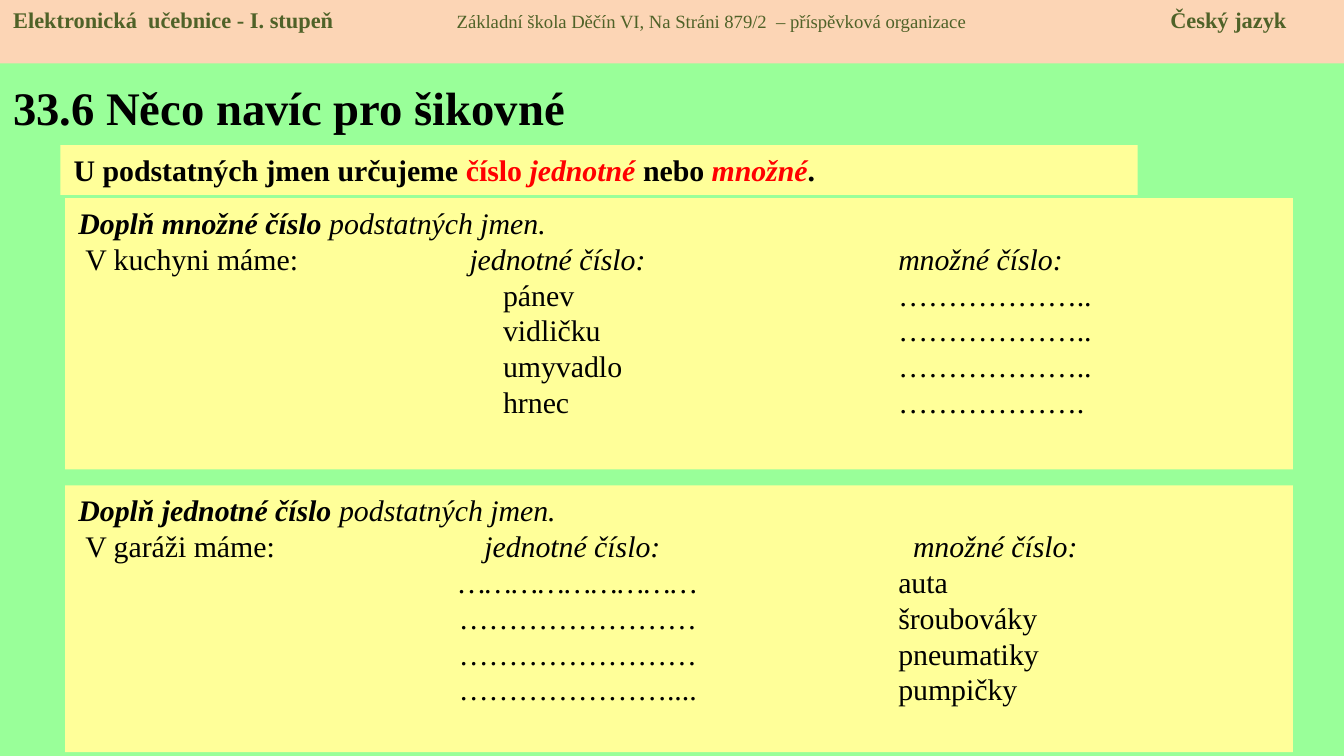
from lxml.etree import SubElement
from pptx import Presentation
from pptx.dml.color import RGBColor
from pptx.enum.shapes import MSO_SHAPE
from pptx.enum.text import MSO_ANCHOR, PP_ALIGN
from pptx.oxml.ns import qn
from pptx.util import Inches, Pt

WIDE = Inches(10)
HIGH = WIDE * 9 // 16
FACE = "Times New Roman"
HUES = {"back": "99FF99", "band": "FCD5B5", "card": "FFFF99",
        "ink": "000000", "olive": "4F6228", "red": "FF0000"}

# Boxes: left, top, width, height in percent of the slide
BAND = (0, 0, 100, 8.4)
TITLE = (0, 8.4, 46.9, 11.5)
RULE = (4.5, 19.2, 80.15, 6.6)
PLURAL = (4.85, 26.2, 91.35, 35.9)
SINGLE = (4.85, 64.2, 91.35, 35.3)


def hue(name):
    return RGBColor.from_string(HUES[name])


def place(box):
    left, top, wide, high = box
    return [int(WIDE * left / 100), int(HIGH * top / 100),
            int(WIDE * wide / 100), int(HIGH * high / 100)]


def panel(slide, box, fill):
    shape = slide.shapes.add_shape(MSO_SHAPE.RECTANGLE, *place(box))
    shape.shadow.inherit = False
    shape.fill.solid()
    shape.fill.fore_color.rgb = hue(fill)
    shape.line.fill.background()
    frame = shape.text_frame
    frame.word_wrap = True
    frame.vertical_anchor = MSO_ANCHOR.TOP
    return frame


def write(para, runs, tabs=()):
    """Fill a line with (text, style, size, colour) runs; tabs in percent of slide width."""
    para.alignment = PP_ALIGN.LEFT
    para.font.name = FACE
    for text, style, size, tint in runs:
        run = para.add_run()
        run.text = text
        font = run.font
        font.name, font.size = FACE, Pt(size)
        font.bold, font.italic = "b" in style, "i" in style
        font.color.rgb = hue(tint)
    if tabs:
        props = para._p.get_or_add_pPr()
        stops = SubElement(props, qn("a:tabLst"))
        props.insert(0, stops)
        for stop in tabs:
            SubElement(stops, qn("a:tab"), pos=str(int(WIDE * stop / 100)), algn="l")


def header(slide, box):
    frame = panel(slide, box, "band")
    write(frame.paragraphs[0], [
        ("Elektronická  učebnice - I. stupeň\t", "b", 12, "olive"),
        ("Základní škola Děčín VI, Na Stráni 879/2  – příspěvková organizace\t", "", 10, "olive"),
        ("Český jazyk", "b", 12, "olive")], (33, 86.1))


def title(slide, box):
    frame = slide.shapes.add_textbox(*place(box)).text_frame
    frame.word_wrap = True
    frame.vertical_anchor = MSO_ANCHOR.MIDDLE
    write(frame.paragraphs[0], [("33.6 Něco navíc pro šikovné", "b", 25, "ink")])


def rule(slide, box):
    parts = [("U podstatných jmen určujeme ", "b", "ink"), ("číslo ", "b", "red"),
             ("jednotné ", "bi", "red"), ("nebo ", "b", "ink"),
             ("množné", "bi", "red"), (".", "b", "ink")]
    frame = panel(slide, box, "card")
    write(frame.paragraphs[0], [(text, style, 16, tint) for text, style, tint in parts])


def task(slide, box, goal, place_name, heads, cols, rows):
    """Exercise card: goal, column heads, then word pairs with the first word's style."""
    frame = panel(slide, box, "card")
    lines = [([(f"{goal} ", "bi"), ("podstatných jmen.", "i")], ()),
             ([(f" {place_name} máme:\t", ""),
               ("jednotné číslo:\tmnožné číslo:", "i")], heads)]
    lines += [([(f"\t{one}\t", style), (many, "")], cols) for one, many, style in rows]
    for num, (runs, tabs) in enumerate(lines):
        para = frame.add_paragraph() if num else frame.paragraphs[0]
        write(para, [(text, style, 16, "ink") for text, style in runs], tabs)


def main():
    deck = Presentation()
    deck.slide_width, deck.slide_height = WIDE, HIGH
    slide = deck.slides.add_slide(deck.slide_layouts[6])
    slide.background.fill.solid()
    slide.background.fill.fore_color.rgb = hue("back")

    # Heading
    title(slide, TITLE)
    header(slide, BAND)

    # Exercises and the rule
    task(slide, PLURAL, "Doplň množné číslo", "V kuchyni", (29.1, 61), (31.6, 61),
         [("pánev", "………………..", ""), ("vidličku", "………………..", ""),
          ("umyvadlo", "………………..", ""), ("hrnec", "……………….", "")])
    rule(slide, RULE)
    task(slide, SINGLE, "Doplň jednotné číslo", "V garáži", (30.2, 62.1), (28.3, 61),
         [("………………………", "auta", "i"), ("……………………", "šroubováky", ""),
          ("……………………", "pneumatiky", ""), ("…………………....", "pumpičky", "")])
    deck.save("out.pptx")


if __name__ == "__main__":
    main()
